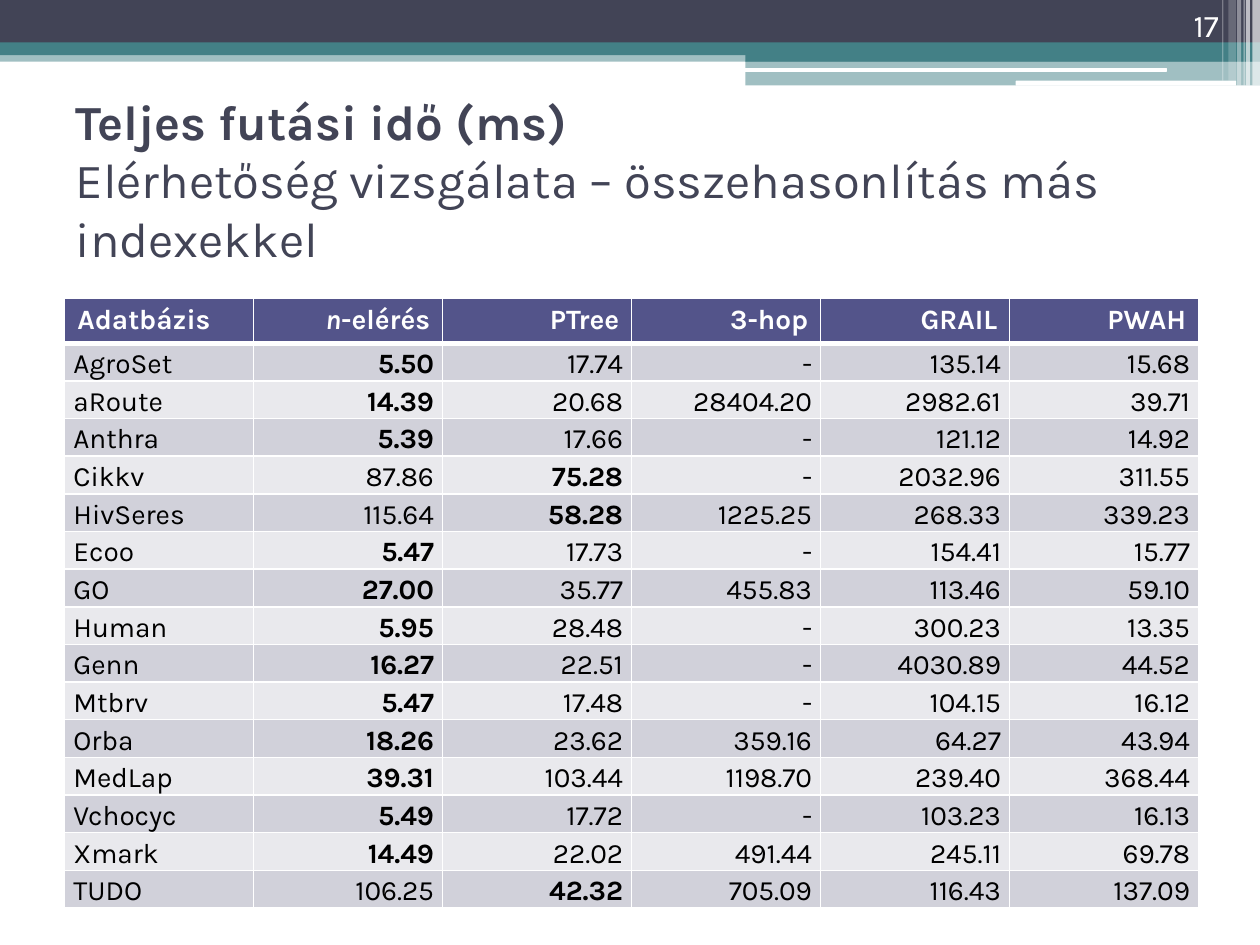
"""Build the slide that compares total running times of reachability indexes."""

from typing import NamedTuple

import lxml.etree
import pptx
import pptx.dml.color
import pptx.enum.shapes
import pptx.enum.text
import pptx.oxml.ns
import pptx.util

Pt = pptx.util.Pt
qn = pptx.oxml.ns.qn
ALIGN = pptx.enum.text.PP_ALIGN
ANCHOR = pptx.enum.text.MSO_ANCHOR
SHAPE = pptx.enum.shapes.MSO_SHAPE

FONT = "Karla"
COLORS = {
    "navy": "424456",
    "teal": "438086",
    "white": "FFFFFF",
    "black": "000000",
    "header": "53548A",
    "odd_row": "D1D1DA",
    "even_row": "E9E9ED",
}


class Bar(NamedTuple):
    left: float
    top: float
    width: float
    height: float
    color: str
    opacity: int = 100
    rounded: bool = False


class Result(NamedTuple):
    database: str
    times: tuple[str, ...]


BANNER = [
    Bar(0, 28.8, 720, 6.5, "teal", 50),
    Bar(0, 0, 720, 24.5, "navy"),
    Bar(0, 24.3, 720, 7.2, "teal"),
    Bar(426, 28.1, 294, 7.2, "teal"),
    Bar(426, 34.6, 294, 14.2, "teal", 50),
    Bar(425.6, 38.9, 241.2, 2.2, "white", rounded=True),
    Bar(580.4, 46.1, 126, 2.9, "white", rounded=True),
    Bar(715.7, 0, 4.3, 49, "white", 65),
    Bar(712, 0, 2.2, 49, "white", 65),
    Bar(710.6, 0, 0.72, 49, "white", 60),
    Bar(707, 0, 2.2, 49, "white", 40),
    Bar(702, 0, 4.3, 46.1, "white", 20),
    Bar(698.4, 0, 0.72, 46.1, "white", 30),
]

HEADINGS = ["Adatbázis", "n-elérés", "PTree", "3-hop", "GRAIL", "PWAH"]
RESULTS = [
    Result("AgroSet", ("5.50", "17.74", "-", "135.14", "15.68")),
    Result("aRoute", ("14.39", "20.68", "28404.20", "2982.61", "39.71")),
    Result("Anthra", ("5.39", "17.66", "-", "121.12", "14.92")),
    Result("Cikkv", ("87.86", "75.28", "-", "2032.96", "311.55")),
    Result("HivSeres", ("115.64", "58.28", "1225.25", "268.33", "339.23")),
    Result("Ecoo", ("5.47", "17.73", "-", "154.41", "15.77")),
    Result("GO", ("27.00", "35.77", "455.83", "113.46", "59.10")),
    Result("Human", ("5.95", "28.48", "-", "300.23", "13.35")),
    Result("Genn", ("16.27", "22.51", "-", "4030.89", "44.52")),
    Result("Mtbrv", ("5.47", "17.48", "-", "104.15", "16.12")),
    Result("Orba", ("18.26", "23.62", "359.16", "64.27", "43.94")),
    Result("MedLap", ("39.31", "103.44", "1198.70", "239.40", "368.44")),
    Result("Vchocyc", ("5.49", "17.72", "-", "103.23", "16.13")),
    Result("Xmark", ("14.49", "22.02", "491.44", "245.11", "69.78")),
    Result("TUDO", ("106.25", "42.32", "705.09", "116.43", "137.09")),
]


def rgb(color: str) -> pptx.dml.color.RGBColor:
    """Return the named colour."""
    return pptx.dml.color.RGBColor.from_string(COLORS[color])


def format_run(run, size: float, color: str, bold: bool = False) -> None:
    """Apply font, size, colour and weight to a run."""
    run.font.name = FONT
    run.font.size = Pt(size)
    run.font.color.rgb = rgb(color)
    run.font.bold = bold


def draw_bar(slide, bar: Bar) -> None:
    """Draw one bar of the top banner."""
    preset = SHAPE.ROUNDED_RECTANGLE if bar.rounded else SHAPE.RECTANGLE
    band = slide.shapes.add_shape(
        preset, Pt(bar.left), Pt(bar.top), Pt(bar.width), Pt(bar.height)
    )
    band.shadow.inherit = False
    band.line.fill.background()
    band.fill.solid()
    band.fill.fore_color.rgb = rgb(bar.color)
    if bar.opacity < 100:
        tint = band.fill._xPr.find(".//" + qn("a:srgbClr"))
        lxml.etree.SubElement(tint, qn("a:alpha"), val=str(bar.opacity * 1000))


def draw_title(slide) -> None:
    """Fill and place the title placeholder."""
    title = slide.shapes.title
    title.left, title.top, title.width, title.height = Pt(36), Pt(60.5), Pt(648), Pt(84)
    frame = title.text_frame
    frame.text = (
        "Teljes futási idő (ms)\v"
        "Elérhetőség vizsgálata – összehasonlítás más indexekkel"
    )
    frame.auto_size = pptx.enum.text.MSO_AUTO_SIZE.NONE
    frame.word_wrap = True
    frame.vertical_anchor = ANCHOR.MIDDLE
    frame.paragraphs[0].alignment = ALIGN.LEFT
    for run, bold in zip(frame.paragraphs[0].runs, (True, False)):
        format_run(run, 28, "navy", bold)


def draw_page_number(slide) -> None:
    """Write the page number in the banner."""
    frame = slide.shapes.add_textbox(Pt(643.7), 0, Pt(59.8), Pt(28.8)).text_frame
    frame.text = "17"
    frame.word_wrap = True
    frame.vertical_anchor = ANCHOR.BOTTOM
    frame.paragraphs[0].alignment = ALIGN.RIGHT
    format_run(frame.paragraphs[0].runs[0], 18, "white")


def style_cell(cell, fill: str, top: float, bottom: float) -> None:
    """Give a cell its white borders and its fill."""
    borders = {"a:lnL": 1, "a:lnR": 1, "a:lnT": top, "a:lnB": bottom}
    for tag, width in borders.items():
        border = lxml.etree.SubElement(
            cell._tc.get_or_add_tcPr(), qn(tag), w=str(Pt(width))
        )
        solid = lxml.etree.SubElement(border, qn("a:solidFill"))
        lxml.etree.SubElement(solid, qn("a:srgbClr"), val=COLORS["white"])
    cell.fill.solid()
    cell.fill.fore_color.rgb = rgb(fill)


def fill_header(cell, heading: str, column: int) -> None:
    """Write one heading, with a leading variable n in italics."""
    style_cell(cell, "header", 1, 3)
    paragraph = cell.text_frame.paragraphs[0]
    paragraph.alignment = ALIGN.RIGHT if column else ALIGN.LEFT
    variable = "n" if heading.startswith("n-") else ""
    for part in filter(None, (variable, heading.removeprefix(variable))):
        run = paragraph.add_run()
        run.text = part
        format_run(run, 16, "white", True)
        run.font.italic = part == variable


def fill_value(cell, value: str, row: int, column: int, fastest: bool) -> None:
    """Write one body cell, in bold if it is the fastest time."""
    style_cell(cell, "odd_row" if row % 2 else "even_row", 3 if row == 1 else 1, 1)
    cell.margin_left = cell.margin_right = Pt(5)
    cell.margin_top = cell.margin_bottom = 0
    cell.text_frame.text = value
    paragraph = cell.text_frame.paragraphs[0]
    paragraph.alignment = ALIGN.RIGHT if column else ALIGN.LEFT
    paragraph.line_spacing = 1.15
    format_run(paragraph.runs[0], 16, "black", fastest)


def draw_results(slide) -> None:
    """Draw the table of running times."""
    header_height, row_height = 25.9, 21.5
    table = slide.shapes.add_table(
        len(RESULTS) + 1, len(HEADINGS), Pt(37), Pt(170.2), Pt(648),
        Pt(header_height + row_height * len(RESULTS)),
    ).table
    table.rows[0].height = Pt(header_height)
    for column, heading in enumerate(HEADINGS):
        fill_header(table.cell(0, column), heading, column)
    for row, result in enumerate(RESULTS, start=1):
        table.rows[row].height = Pt(row_height)
        best = min((time for time in result.times if time != "-"), key=float)
        for column, value in enumerate((result.database, *result.times)):
            fill_value(table.cell(row, column), value, row, column, value == best)


def main() -> None:
    """Assemble and save the slide."""
    deck = pptx.Presentation()
    deck.slide_width, deck.slide_height = Pt(720), Pt(540)
    slide = deck.slides.add_slide(deck.slide_layouts[5])
    for bar in BANNER:
        draw_bar(slide, bar)
    draw_title(slide)
    draw_results(slide)
    draw_page_number(slide)
    deck.save("out.pptx")


if __name__ == "__main__":
    main()
